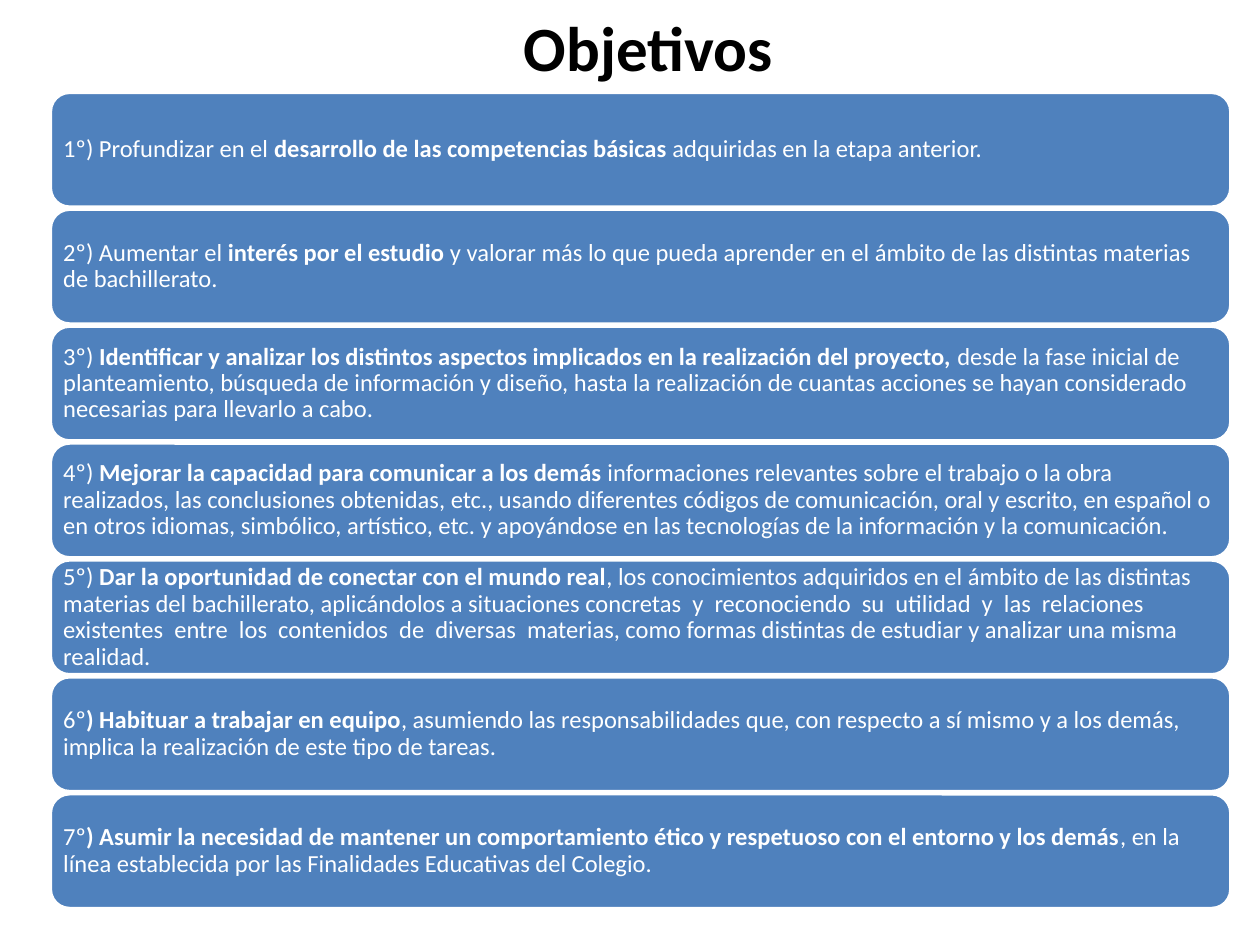
"""Build the slide listing the seven objectives as stacked rounded bars."""
import pptx
import pptx.dml.color
import pptx.enum.shapes
import pptx.enum.text
import pptx.util

Pt = pptx.util.Pt

TITLE = "Objetivos"
OBJECTIVES = [
    ("1º) Profundizar en el ", "desarrollo de las competencias básicas ",
     "adquiridas en la etapa anterior."),
    ("2º) Aumentar el ", "interés por el estudio ",
     "y valorar más lo que pueda aprender en el ámbito de las distintas materias "
     "de bachillerato."),
    ("3º) ", "Identificar y analizar los distintos aspectos implicados en la "
     "realización del proyecto, ",
     "desde la fase inicial de planteamiento, búsqueda de información y diseño, "
     "hasta la realización de cuantas acciones se hayan considerado necesarias "
     "para llevarlo a cabo."),
    ("4º) ", "Mejorar la capacidad para comunicar a los demás",
     " informaciones relevantes sobre el trabajo o la obra realizados, las "
     "conclusiones obtenidas, etc., usando diferentes códigos de comunicación, "
     "oral y escrito, en español o en otros idiomas, simbólico, artístico, etc. "
     "y apoyándose en las tecnologías de la información y la comunicación."),
    ("5º) ", "Dar la oportunidad de conectar con el mundo real",
     ", los conocimientos adquiridos en el ámbito de las distintas materias del "
     "bachillerato, aplicándolos a situaciones concretas  y  reconociendo  su  "
     "utilidad  y  las  relaciones existentes  entre  los  contenidos  de  "
     "diversas  materias, como formas distintas de estudiar y analizar una misma "
     "realidad."),
    ("6º", ") Habituar a trabajar en equipo",
     ", asumiendo las responsabilidades que, con respecto a sí mismo y a los "
     "demás, implica la realización de este tipo de tareas."),
    ("7º", ") Asumir la necesidad de mantener un comportamiento ético y "
     "respetuoso con el entorno y los demás",
     ", en la línea establecida por las Finalidades Educativas del Colegio."),
]

COLORS = {"bar": "4F81BD", "white": "FFFFFF", "black": "000000"}
BAR = {"left": 28.8, "top": 52.8, "width": 674.6, "height": 65.6, "pitch": 66.8}
INSET = Pt(4.2)
BAR_FRAME = {
    "word_wrap": True,
    "vertical_anchor": pptx.enum.text.MSO_ANCHOR.MIDDLE,
    "margin_left": INSET, "margin_right": INSET,
    "margin_top": INSET, "margin_bottom": INSET,
}
TITLE_FRAME = {
    "word_wrap": False,
    "auto_size": pptx.enum.text.MSO_AUTO_SIZE.SHAPE_TO_FIT_TEXT,
}
BAR_PARA = {"alignment": pptx.enum.text.PP_ALIGN.LEFT, "line_spacing": 0.9}


def color(name):
    return pptx.dml.color.RGBColor.from_string(COLORS[name])


def set_all(target, values):
    for name, value in values.items():
        setattr(target, name, value)


def add_span(para, text, size, bold, color_name):
    span = para.add_run()
    span.text = text
    set_all(span.font, {"name": "Calibri", "size": Pt(size), "bold": bold})
    span.font.color.rgb = color(color_name)


def add_bar(page, index, parts):
    bar = page.shapes.add_shape(
        pptx.enum.shapes.MSO_SHAPE.ROUNDED_RECTANGLE,
        Pt(BAR["left"]), Pt(BAR["top"] + index * BAR["pitch"]),
        Pt(BAR["width"]), Pt(BAR["height"]))
    bar.shadow.inherit = False
    bar.fill.solid()
    bar.fill.fore_color.rgb = color("bar")
    bar.line.color.rgb = color("white")
    bar.line.width = Pt(2)
    set_all(bar.text_frame, BAR_FRAME)
    para = bar.text_frame.paragraphs[0]
    set_all(para, BAR_PARA)
    for text, bold in zip(parts, (False, True, False)):
        add_span(para, text, 14, bold, "white")


def main():
    deck = pptx.Presentation()
    set_all(deck, {"slide_width": Pt(720), "slide_height": Pt(540)})
    page = deck.slides.add_slide(deck.slide_layouts[6])
    for index, parts in enumerate(OBJECTIVES):
        add_bar(page, index, parts)
    box = page.shapes.add_textbox(Pt(292.3), Pt(1.4), Pt(158.4), Pt(51.1))
    set_all(box.text_frame, TITLE_FRAME)
    add_span(box.text_frame.paragraphs[0], TITLE, 36, True, "black")
    deck.save("out.pptx")


if __name__ == "__main__":
    main()
